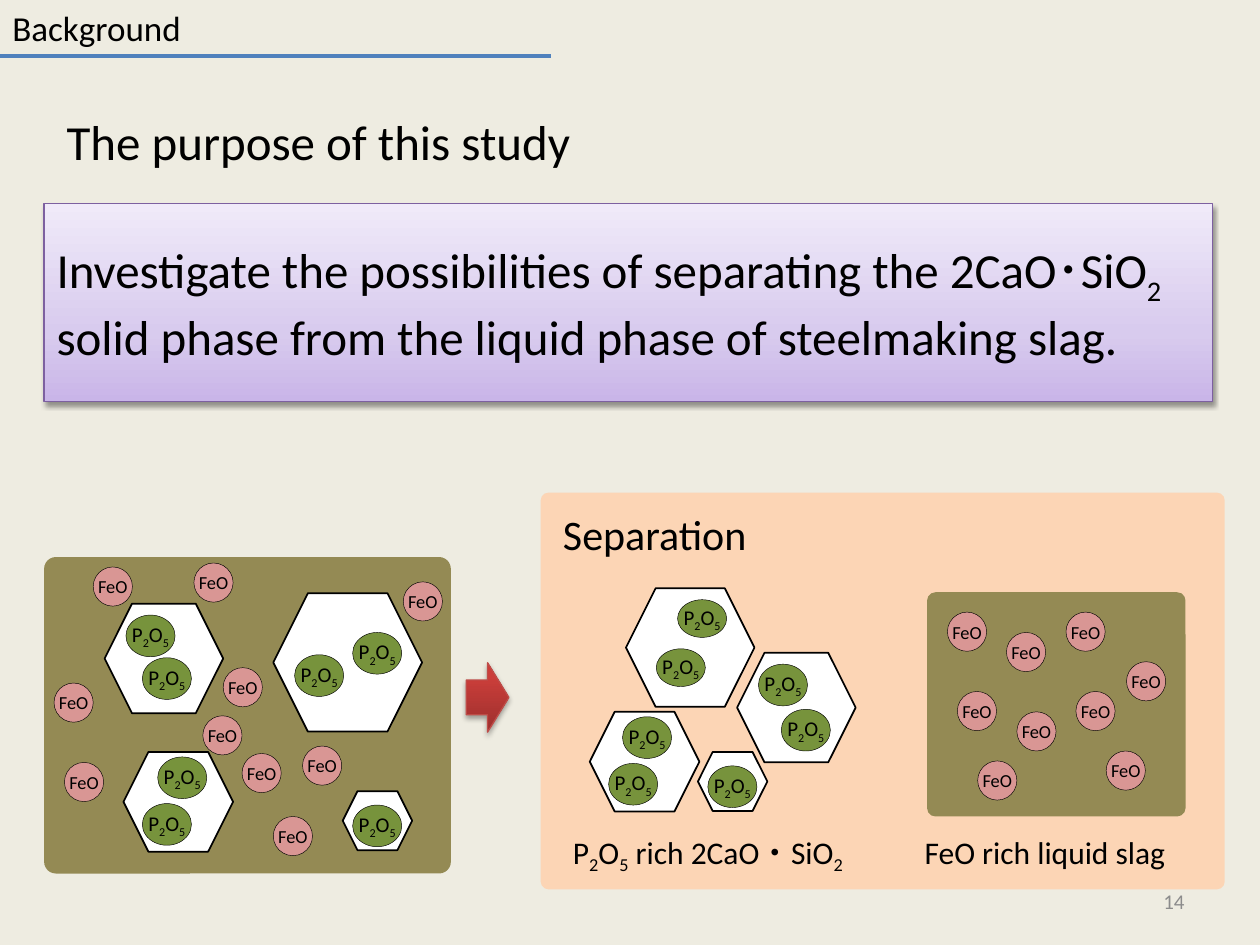
import dataclasses
import typing

import lxml.etree
import pptx
import pptx.dml.color
import pptx.enum.shapes
import pptx.enum.text
import pptx.oxml.ns
import pptx.util

Cm = pptx.util.Cm
Pt = pptx.util.Pt
Rgb = pptx.dml.color.RGBColor.from_string
qn = pptx.oxml.ns.qn
Kind = pptx.enum.shapes.MSO_SHAPE
Align = pptx.enum.text.PP_ALIGN
Anchor = pptx.enum.text.MSO_ANCHOR


@dataclasses.dataclass(frozen=True)
class Theme:
    font: str = "Calibri"
    ink: str = "000000"
    muted: str = "8C8C8C"
    page: str = "EEECE1"
    rule: str = "4F81BD"
    panel: str = "FCD5B5"
    slag: str = "948A54"
    iron: str = "D99694"
    phosphate: str = "77933C"
    crystal: str = "FFFFFF"
    arrow_line: str = "BF4C48"
    arrow_stops: tuple = ((0, "9C2F2D"), (0.8, "CB3E3A"), (1, "CE3B37"))
    purpose_line: str = "7D60A0"
    purpose_stops: tuple = ((0, "C9B5E8"), (0.35, "D8CBEE"), (1, "F0EAF9"))
    heading: float = 28
    subheading: float = 24
    section: float = 20
    caption: float = 18
    small: float = 12
    iron_label: float = 10.5


class Box(typing.NamedTuple):
    """Left, top, width and height in centimetres."""
    left: float
    top: float
    width: float
    height: float

    def lengths(self) -> list:
        return [Cm(value) for value in self]


class Crystal(typing.NamedTuple):
    """A solid grain; phosphates are offsets from its top left corner."""
    box: Box
    phosphates: tuple
    phosphate_height: float = 0.84


THEME = Theme()
IRON_SIZE = 0.79
PHOSPHATE_WIDTH = 0.99

MIXED_SLAG = Box(0.89, 11.23, 8.2, 6.38)
MIXED_IRON = ((3.91, 11.35), (1.09, 13.77), (6.1, 15.04), (1.3, 15.37), (4.88, 15.19),
              (8.13, 11.73), (4.5, 13.46), (1.88, 11.43), (5.51, 16.46), (4.09, 14.43))
LIQUID_SLAG = Box(18.69, 11.94, 5.21, 4.52)
LIQUID_IRON = ((19.1, 12.34), (20.29, 12.75), (21.49, 12.34), (22.71, 13.34), (21.69, 13.94),
               (19.3, 13.94), (19.71, 15.34), (22.3, 15.14), (20.5, 14.35))
CRYSTALS = (
    Crystal(Box(6.91, 15.95, 1.4, 1.19), ((0.2, 0.28),)),
    Crystal(Box(5.51, 11.96, 3, 2.79), ((1.6, 0.79), (0.43, 1.24))),
    Crystal(Box(2.49, 15.16, 2.21, 2.01), ((0.38, 1.04), (0.69, 0.1))),
    Crystal(Box(2.11, 12.17, 2.39, 2.21), ((0.43, 0.23), (0.76, 1.09))),
    Crystal(Box(12.62, 11.86, 2.59, 2.39), ((1.04, 0.23), (0.61, 1.22)), 0.76),
    Crystal(Box(14.86, 13.16, 2.39, 2.21), ((0.43, 0.23), (0.89, 1.14))),
    Crystal(Box(11.89, 14.35, 2.21, 2.01), ((0.38, 1.04), (0.66, 0.1))),
    Crystal(Box(14.07, 15.16, 1.4, 1.19), ((0.2, 0.28),)),
)


def write(frame, text: str, size: float, color: str = THEME.ink,
          align=Align.LEFT, anchor=Anchor.TOP, wrap: bool = True) -> None:
    """Fill a text frame; every second part between bars is a subscript."""
    frame.word_wrap = wrap
    frame.vertical_anchor = anchor
    para = frame.paragraphs[0]
    para.alignment = align
    para.font.name = THEME.font
    para.font.size = Pt(size)
    para.font.color.rgb = Rgb(color)
    for index, part in enumerate(text.split("|")):
        if part:
            span = para.add_run()
            span.text = part
            if index % 2:
                span._r.get_or_add_rPr().set("baseline", "-25000")


def add_text(page, box: Box, text: str, size: float, **style) -> None:
    write(page.shapes.add_textbox(*box.lengths()).text_frame, text, size, **style)


def add_shape(shapes, kind, box: Box, fill: str | None = None,
              line: str | None = None, line_width: float = 1):
    shape = shapes.add_shape(kind, *box.lengths())
    shape.shadow.inherit = False
    if fill:
        shape.fill.solid()
        shape.fill.fore_color.rgb = Rgb(fill)
    if line:
        shape.line.color.rgb = Rgb(line)
        shape.line.width = Pt(line_width)
    else:
        shape.line.fill.background()
    return shape


def add_panel(shapes, box: Box, fill: str, rounding: float) -> None:
    add_shape(shapes, Kind.ROUNDED_RECTANGLE, box, fill).adjustments[0] = rounding


def add_particle(shapes, box: Box, fill: str, label: str, size: float) -> None:
    particle = add_shape(shapes, Kind.OVAL, box, fill, THEME.ink, 0.25)
    frame = particle.text_frame
    frame.margin_left = frame.margin_right = frame.margin_top = frame.margin_bottom = 0
    write(frame, label, size, align=Align.CENTER, anchor=Anchor.MIDDLE, wrap=False)


def add_iron(shapes, places: tuple) -> None:
    for left, top in places:
        add_particle(shapes, Box(left, top, IRON_SIZE, IRON_SIZE), THEME.iron,
                     "FeO", THEME.iron_label)


def add_crystal(page, crystal: Crystal) -> None:
    shapes = page.shapes.add_group_shape().shapes
    add_shape(shapes, Kind.HEXAGON, crystal.box, THEME.crystal, THEME.ink)
    for across, down in crystal.phosphates:
        box = Box(crystal.box.left + across, crystal.box.top + down,
                  PHOSPHATE_WIDTH, crystal.phosphate_height)
        add_particle(shapes, box, THEME.phosphate, "P|2|O|5", THEME.small)


def add_raised_shape(page, kind, box: Box, stops: tuple, line: str,
                     shadow_distance: float, shadow_opacity: int):
    """A shape with a bottom-to-top gradient and a shadow below it."""
    shape = add_shape(page.shapes, kind, box, line=line, line_width=0.75)
    shape.fill.gradient()
    shape.fill.gradient_angle = 90
    properties = shape.element.spPr
    stop_list = properties.find(".//" + qn("a:gsLst"))
    stop_list.clear()
    for position, color in stops:
        stop = lxml.etree.SubElement(stop_list, qn("a:gs"), pos=str(round(position * 100000)))
        lxml.etree.SubElement(stop, qn("a:srgbClr"), val=color)
    shadow = lxml.etree.SubElement(
        properties.find(qn("a:effectLst")), qn("a:outerShdw"), blurRad=str(Pt(3.1)),
        dist=str(Pt(shadow_distance)), dir="5400000", rotWithShape="0")
    color = lxml.etree.SubElement(shadow, qn("a:srgbClr"), val=THEME.ink)
    lxml.etree.SubElement(color, qn("a:alpha"), val=str(shadow_opacity * 1000))
    return shape


def add_header(page) -> None:
    title = page.shapes.title
    title.left, title.top, title.width, title.height = Box(1.09, 2.13, 10.9, 1.45).lengths()
    write(title.text_frame, "The purpose of this study", THEME.heading, wrap=False)
    title.text_frame.auto_size = pptx.enum.text.MSO_AUTO_SIZE.NONE
    add_text(page, Box(0, 0, 3.99, 1.12), "Background", THEME.section, wrap=False)
    rule = page.shapes.add_connector(
        pptx.enum.shapes.MSO_CONNECTOR.STRAIGHT, 0, Cm(1.12), Cm(11.1), Cm(1.12))
    rule.line.color.rgb = Rgb(THEME.rule)
    rule.line.width = Pt(2.25)
    lxml.etree.SubElement(rule.element.spPr, qn("a:effectLst"))


def main() -> None:
    deck = pptx.Presentation()
    deck.slide_width, deck.slide_height = Cm(25.4), Cm(19.05)
    page = deck.slides.add_slide(deck.slide_layouts.get_by_name("Title Only"))
    page.background.fill.solid()
    page.background.fill.fore_color.rgb = Rgb(THEME.page)

    add_header(page)
    purpose = add_raised_shape(page, Kind.RECTANGLE, Box(0.89, 4.11, 23.55, 3.99),
                               THEME.purpose_stops, THEME.purpose_line, 1.6, 38)
    write(purpose.text_frame,
          "Investigate the possibilities of separating the 2CaO･SiO|2 |"
          "solid phase from the liquid phase of steelmaking slag.",
          THEME.heading, anchor=Anchor.MIDDLE)

    add_panel(page.shapes, Box(10.9, 9.93, 13.79, 8), THEME.panel, 0.02)
    add_panel(page.shapes, MIXED_SLAG, THEME.slag, 0.037)
    for crystal in CRYSTALS:
        add_crystal(page, crystal)
    add_iron(page.shapes, MIXED_IRON)
    add_raised_shape(page, Kind.RIGHT_ARROW, Box(9.4, 13.36, 0.86, 1.4),
                     THEME.arrow_stops, THEME.arrow_line, 1.8, 35)
    liquid = page.shapes.add_group_shape().shapes
    add_panel(liquid, LIQUID_SLAG, THEME.slag, 0.037)
    add_iron(liquid, LIQUID_IRON)

    add_text(page, Box(11.1, 10.13, 6.81, 1.27), "Separation", THEME.subheading)
    add_text(page, Box(11.3, 16.66, 6.81, 1.02), "P|2|O|5| rich 2CaO・SiO|2", THEME.caption)
    add_text(page, Box(18.39, 16.66, 6.81, 1.02), "FeO rich liquid slag", THEME.caption)
    add_text(page, Box(18.21, 17.65, 5.92, 1.02), "14", THEME.small, color=THEME.muted,
             align=Align.RIGHT, anchor=Anchor.MIDDLE)
    deck.save("out.pptx")


if __name__ == "__main__":
    main()
